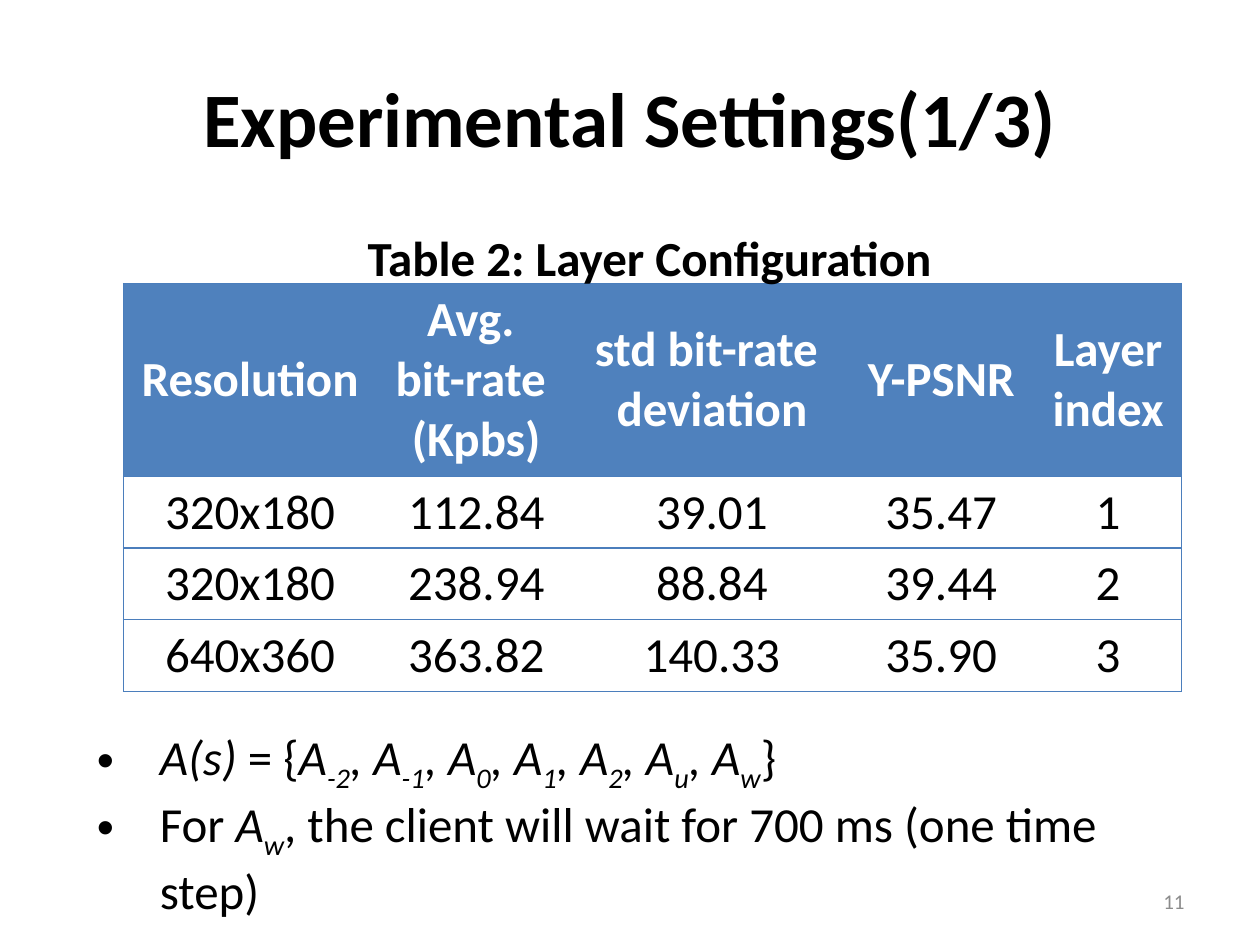
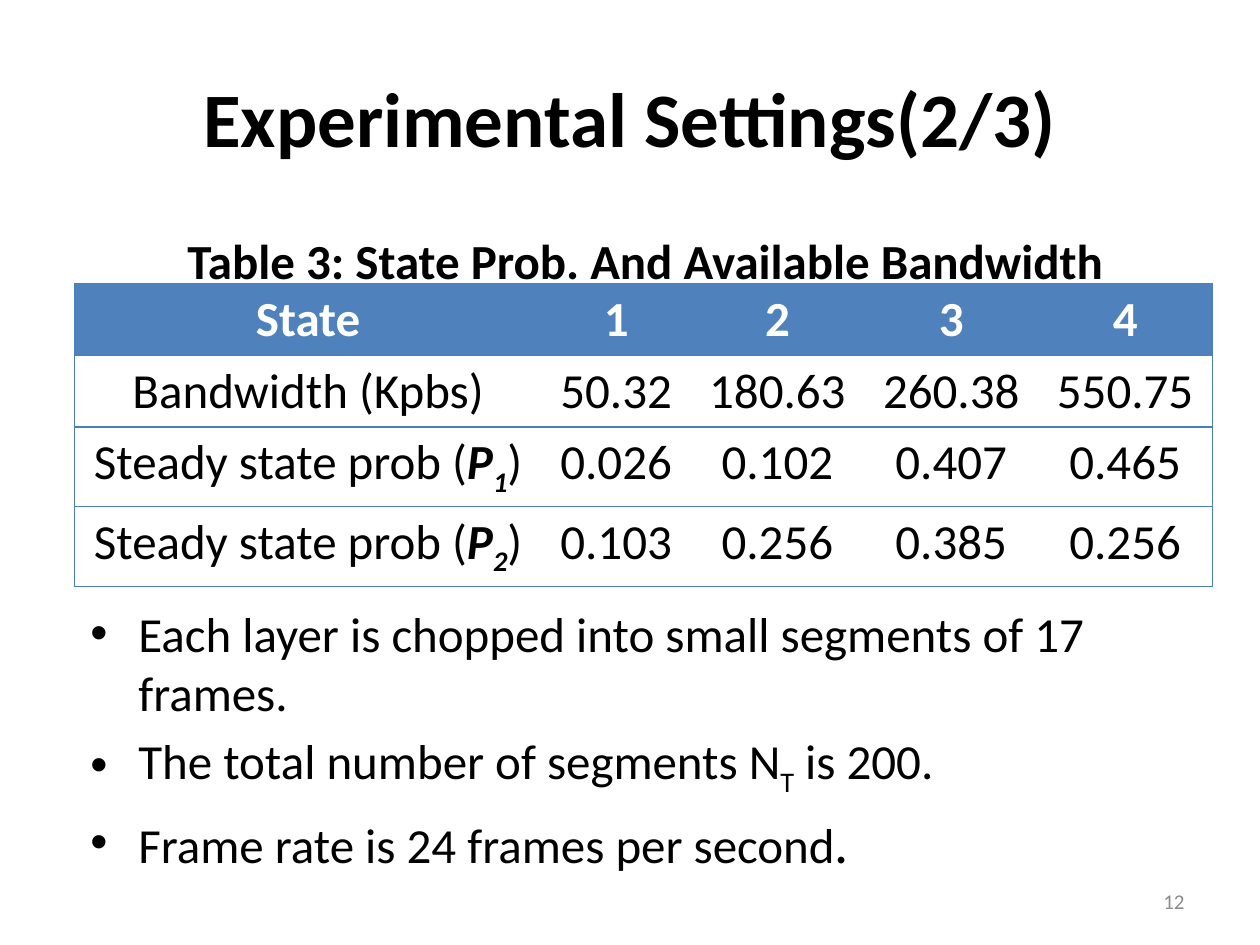
from lxml.etree import SubElement
from pptx import Presentation
from pptx.dml.color import RGBColor
from pptx.enum.text import MSO_ANCHOR, PP_ALIGN
from pptx.oxml import parse_xml
from pptx.oxml.ns import nsdecls, qn
from pptx.util import Inches, Pt

BLACK = RGBColor(0x00, 0x00, 0x00)
WHITE = RGBColor(0xFF, 0xFF, 0xFF)
GREY = RGBColor(0x8C, 0x8C, 0x8C)
HEADER_BLUE = RGBColor(0x4F, 0x81, 0xBD)
RULE_BLUE = RGBColor(0x4B, 0x7E, 0xBC)
FONT = "Calibri"
BODY_SIZE = 28

# A paragraph is a string or a list of (text, style) runs;
# style letters: b bold, i italic, s subscript, + larger
ACTIONS = ["-2", "-1", "0", "1", "2", "u", "w"]
action_set = [("A(s)", "i"), (" = {", "")]
for position, action in enumerate(ACTIONS):
    action_set += [(", A" if position else "A", "i"), (action, "is")]
action_set.append(("}", ""))


def steady_state(index):
    return [("Steady state prob (", ""), ("P", "bi"), (index, "bis"), (")", "")]


SLIDES = [
    {
        "title": "Experimental Settings(1/3)",
        "number": "11",
        "caption": "Table 2: Layer Configuration",
        "caption_at": (0.98, 1.76, 8.35, 0.57),
        "table_at": (0.98, 2.25),
        "columns": [2.01, 1.58, 2.16, 1.48, 1.17],
        "rows": [1.53, 0.57, 0.57, 0.57],
        "anchor": MSO_ANCHOR.MIDDLE,
        "cells": [
            [["Resolution"], ["Avg. ", "bit-rate ", "(Kpbs)"],
             ["std bit-rate ", "deviation"], ["Y-PSNR"], ["Layer", "index"]],
            [["320x180"], ["112.84"], ["39.01"], ["35.47"], ["1"]],
            [["320x180"], ["238.94"], ["88.84"], ["39.44"], ["2"]],
            [["640x360"], ["363.82"], ["140.33"], ["35.90"], ["3"]],
        ],
        "bullets": [
            action_set,
            [("For ", ""), ("A", "i"), ("w", "is"),
             (", the client will wait for 700 ms (one time step)", "")],
        ],
        "bullets_at": (0.67, 5.72, 8.98, 1.04),
        "indent": 0.5,
        "space_before": 0,
    },
    {
        "title": "Experimental Settings(2/3)",
        "number": "12",
        "caption": "Table 3: State Prob. And Available Bandwidth",
        "caption_at": (0.75, 1.78, 8.74, 0.57),
        "table_at": (0.59, 2.25),
        "columns": [3.71, 1.18, 1.38, 1.38, 1.38],
        "rows": [0.57, 0.57, 0.63, 0.63],
        "anchor": MSO_ANCHOR.TOP,
        "cells": [
            [["State"], ["1"], ["2"], ["3"], ["4"]],
            [["Bandwidth (Kpbs)"], ["50.32"], ["180.63"], ["260.38"], ["550.75"]],
            [[steady_state("1")], ["0.026"], ["0.102"], ["0.407"], ["0.465"]],
            [[steady_state("2")], ["0.103"], ["0.256"], ["0.385"], ["0.256"]],
        ],
        "bullets": [
            "Each layer is chopped into small segments of 17 frames.",
            [("The total number of segments N", ""), ("T", "s"), (" is 200.", "")],
            [("Frame rate is 24 frames per second", ""), (".", "+")],
        ],
        "bullets_at": (0.62, 4.74, 9, 2.24),
        "indent": 0.38,
        "space_before": 5.6,
    },
]


def write(frame, paragraphs, size=BODY_SIZE, color=BLACK, bold=False,
          align=PP_ALIGN.LEFT, indent=None, space_before=0):
    for index, content in enumerate(paragraphs):
        paragraph = frame.paragraphs[0] if index == 0 else frame.add_paragraph()
        paragraph.alignment = align
        paragraph.space_before = Pt(space_before)
        if indent:
            add_bullet(paragraph, indent)
        runs = [(content, "")] if isinstance(content, str) else content
        for text, style in runs:
            run = paragraph.add_run()
            run.text = text
            run.font.name = FONT
            run.font.size = Pt(size + 4 if "+" in style else size)
            run.font.color.rgb = color
            run.font.bold = bold or "b" in style
            run.font.italic = "i" in style
            if "s" in style:
                run._r.get_or_add_rPr().set("baseline", "-25000")


def add_bullet(paragraph, indent):
    properties = paragraph._p.get_or_add_pPr()
    properties.set("marL", str(Inches(indent)))
    properties.set("indent", str(-Inches(indent)))
    SubElement(properties, qn("a:buFont"), typeface="Arial")
    SubElement(properties, qn("a:buChar"), char="•")


def add_text(slide, at, paragraphs, anchor=MSO_ANCHOR.TOP, **style):
    frame = slide.shapes.add_textbox(*map(Inches, at)).text_frame
    frame.word_wrap = True
    frame.vertical_anchor = anchor
    write(frame, paragraphs, **style)


def set_borders(cell, left, right):
    """Rule above and below each cell; side rules only at the table's edge."""
    edges = {"lnL": left, "lnR": right, "lnT": True, "lnB": True}
    for index, (edge, shown) in enumerate(edges.items()):
        paint = (f'<a:solidFill><a:srgbClr val="{RULE_BLUE}"/></a:solidFill>'
                 if shown else "<a:noFill/>")
        line = parse_xml(f'<a:{edge} {nsdecls("a")} w="{Pt(0.75)}">{paint}</a:{edge}>')
        cell._tc.get_or_add_tcPr().insert(index, line)


def add_data_table(slide, content):
    columns, rows = content["columns"], content["rows"]
    size = (sum(columns), sum(rows))
    table = slide.shapes.add_table(
        len(rows), len(columns), *map(Inches, content["table_at"] + size)).table
    table.horz_banding = False
    for column, width in zip(table.columns, columns):
        column.width = Inches(width)
    for row, height in zip(table.rows, rows):
        row.height = Inches(height)
    for r, values in enumerate(content["cells"]):
        header = r == 0
        for c, paragraphs in enumerate(values):
            cell = table.cell(r, c)
            cell.vertical_anchor = content["anchor"]
            cell.fill.solid()
            cell.fill.fore_color.rgb = HEADER_BLUE if header else WHITE
            set_borders(cell, left=c == 0, right=c == len(columns) - 1)
            write(cell.text_frame, paragraphs, bold=header,
                  color=WHITE if header else BLACK, align=PP_ALIGN.CENTER)


def main():
    deck = Presentation()
    deck.slide_width, deck.slide_height = Inches(10), Inches(7.5)
    for content in SLIDES:
        slide = deck.slides.add_slide(deck.slide_layouts[6])
        # Title
        add_text(slide, (0.5, 0.3, 9, 1.25), [content["title"]], size=44, bold=True,
                 align=PP_ALIGN.CENTER, anchor=MSO_ANCHOR.MIDDLE)
        # Table and page number
        add_data_table(slide, content)
        add_text(slide, (7.17, 6.95, 2.33, 0.4), [content["number"]], size=12,
                 color=GREY, align=PP_ALIGN.RIGHT, anchor=MSO_ANCHOR.MIDDLE)
        # Caption and bullets
        add_text(slide, content["caption_at"], [content["caption"]], bold=True,
                 align=PP_ALIGN.CENTER)
        add_text(slide, content["bullets_at"], content["bullets"],
                 indent=content["indent"], space_before=content["space_before"])
    deck.save("out.pptx")


if __name__ == "__main__":
    main()
